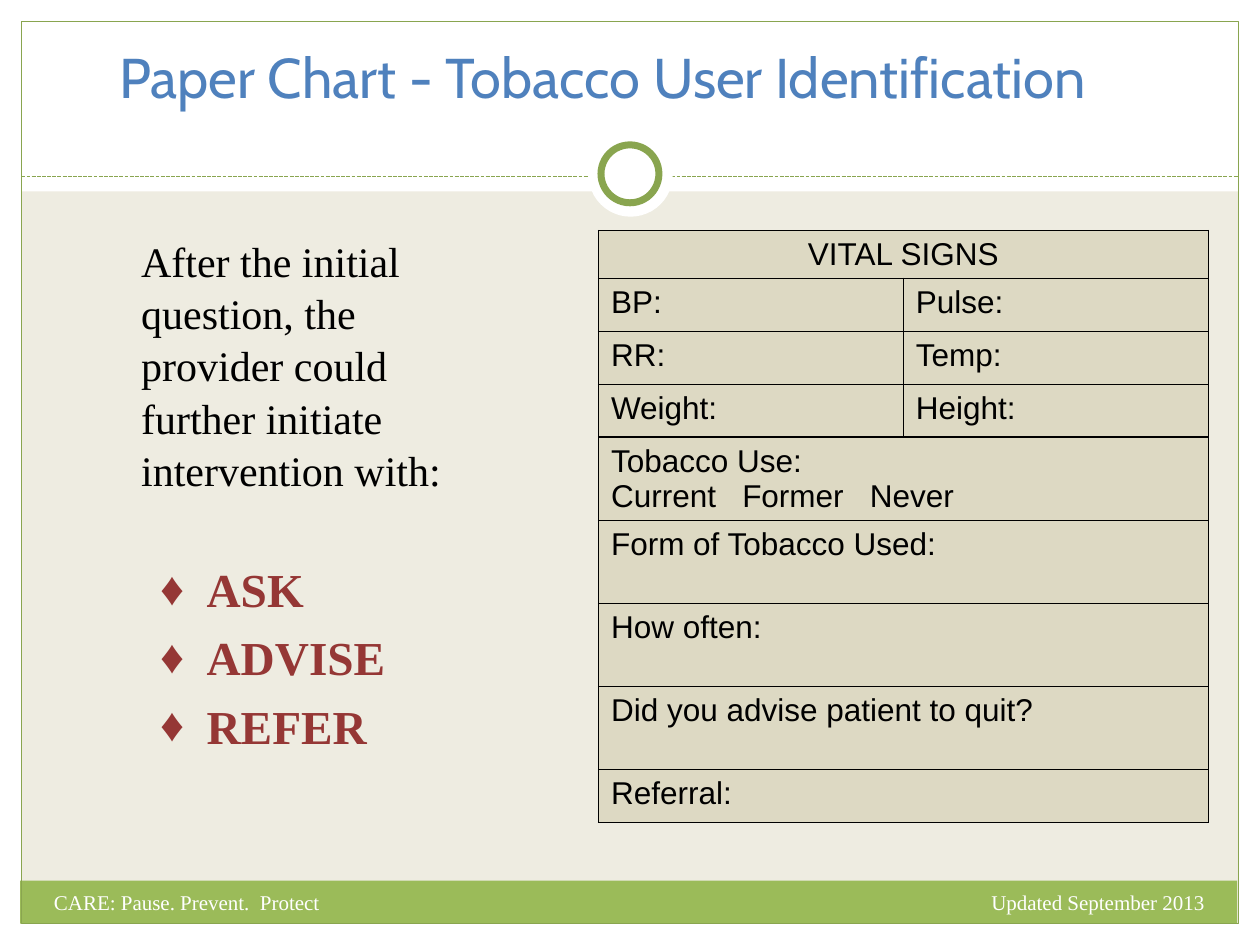
import pptx
import pptx.dml.color
import pptx.enum.dml
import pptx.enum.shapes
import pptx.enum.text
import pptx.oxml
import pptx.oxml.ns
import pptx.util
from pptx.util import Inches

SHAPE = pptx.enum.shapes.MSO_SHAPE
ALIGN = pptx.enum.text.PP_ALIGN
ANCHOR = pptx.enum.text.MSO_ANCHOR
SERIF = "Times New Roman"
WHITE, GREEN, OLIVE = "FFFFFF", "9BBB59", "89A54F"

# One label spans the row; two labels share it
VITAL_ROWS = [
    (["VITAL SIGNS"], 0.38),
    (["BP:", "Pulse:"], 0.42),
    (["RR:", "Temp:"], 0.42),
    (["Weight:", "Height:"], 0.42),
    (["Tobacco Use:\vCurrent   Former   Never"], 0.66),
    (["Form of Tobacco Used:"], 0.66),
    (["How often:"], 0.66),
    (["Did you advise patient to quit?"], 0.66),
    (["Referral:"], 0.42),
]


def color(value):
    return pptx.dml.color.RGBColor.from_string(value)


def xml(tag, attributes="", content=""):
    namespace = pptx.oxml.ns.nsdecls("a")
    return pptx.oxml.parse_xml(f"<a:{tag} {namespace} {attributes}>{content}</a:{tag}>")


def format_text(paragraph, size, font, fill, bold=False, align=ALIGN.LEFT):
    paragraph.alignment = align
    for run in paragraph.runs:
        run.font.size = pptx.util.Pt(size)
        run.font.name = font
        run.font.bold = bold
        run.font.color.rgb = color(fill)


def place(item, left, top, width, height):
    item.left, item.top = Inches(left), Inches(top)
    item.width, item.height = Inches(width), Inches(height)


def add_panel(slide, kind, box, fill=None, line=None, weight=0.75):
    panel = slide.shapes.add_shape(kind, *map(Inches, box))
    panel.shadow.inherit = False
    if fill:
        panel.fill.solid()
        panel.fill.fore_color.rgb = color(fill)
    else:
        panel.fill.background()
    if line:
        panel.line.color.rgb = color(line)
        panel.line.width = pptx.util.Pt(weight)
    else:
        panel.line.fill.background()


def add_frame(slide):
    # White margins and header, then the green footer
    for box in [(0, 7.33, 10, 0.17), (0, 0, 10, 1.52),
                (0, 0, 0.17, 7.5), (9.83, 0, 0.17, 7.5)]:
        add_panel(slide, SHAPE.RECTANGLE, box, WHITE)
    add_panel(slide, SHAPE.RECTANGLE, (0.16, 6.99, 9.66, 0.34), GREEN)
    add_panel(slide, SHAPE.RECTANGLE, (0.17, 0.17, 9.66, 7.16), line=OLIVE)

    # Dashed divider with the ring on it
    divider = slide.shapes.add_connector(
        pptx.enum.shapes.MSO_CONNECTOR.STRAIGHT,
        Inches(0.17), Inches(1.4), Inches(9.83), Inches(1.4))
    divider.line.color.rgb = color(OLIVE)
    divider.line.width = pptx.util.Pt(0.75)
    divider.line.dash_style = pptx.enum.dml.MSO_LINE.SQUARE_DOT
    divider.element.spPr.append(xml("effectLst"))
    add_panel(slide, SHAPE.OVAL, (4.67, 1.05, 0.67, 0.67), WHITE)
    add_panel(slide, SHAPE.OVAL, (4.77, 1.15, 0.46, 0.46), WHITE, OLIVE, 4)


def fill_title(slide):
    title = slide.shapes.title
    place(title, 0, 0, 9.67, 0.92)
    title.text_frame.text = "Paper Chart - Tobacco User Identification "
    title.text_frame.vertical_anchor = ANCHOR.BOTTOM
    title.text_frame.auto_size = pptx.enum.text.MSO_AUTO_SIZE.NONE
    format_text(title.text_frame.paragraphs[0], 32, "Cabin", "4F81BD", align=ALIGN.CENTER)
    slide.shapes.element.append(title.element)  # in front of the header


def indent(paragraph, margin, hanging, bullet):
    properties = paragraph._p.get_or_add_pPr()
    properties.set("marL", str(Inches(margin)))
    properties.set("indent", str(Inches(hanging)))
    properties.append(bullet)


def fill_body(slide):
    body = slide.placeholders[1]
    place(body, 0.42, 1.8, 3.67, 4.95)
    frame = body.text_frame
    frame.auto_size = pptx.enum.text.MSO_AUTO_SIZE.NONE
    frame.text = ("After the initial question, the provider could "
                  "further initiate intervention with:")
    intro = frame.paragraphs[0]
    intro.line_spacing = 1.04
    intro.space_before = pptx.util.Pt(4.8)
    format_text(intro, 24, SERIF, "000000")
    indent(intro, 0.6, 0, xml("buNone"))

    for action, gap in [("ASK", 36), ("ADVISE", 5.4), ("REFER", 5.4)]:
        step = frame.add_paragraph()
        step.text = action
        step.line_spacing = 1.04
        step.space_before = pptx.util.Pt(gap)
        format_text(step, 27, SERIF, "953735", bold=True)
        indent(step, 1.12, -0.37, xml("buChar", 'char="♦"'))
    slide.shapes.element.append(body.element)


def style_cell(cell):
    cell.fill.solid()
    cell.fill.fore_color.rgb = color("DDD9C3")
    properties = cell._tc.get_or_add_tcPr()
    stroke = '<a:solidFill><a:srgbClr val="000000"/></a:solidFill>'
    for position, side in enumerate(("lnL", "lnR", "lnT", "lnB")):
        properties.insert(position, xml(side, 'w="12700"', stroke))


def add_vital_signs(slide):
    height = sum(row_height for _, row_height in VITAL_ROWS)
    vitals = slide.shapes.add_table(
        len(VITAL_ROWS), 2, Inches(4.75), Inches(1.83), Inches(4.84), Inches(height)).table
    vitals.first_row = vitals.horz_banding = False
    for row, (labels, row_height) in enumerate(VITAL_ROWS):
        vitals.rows[row].height = Inches(row_height)
        for column in range(2):
            style_cell(vitals.cell(row, column))
        if len(labels) == 1:
            vitals.cell(row, 0).merge(vitals.cell(row, 1))
        for column, label in enumerate(labels):
            paragraph = vitals.cell(row, column).text_frame.paragraphs[0]
            paragraph.text = label
            format_text(paragraph, 18, "Arial", "000000",
                        align=ALIGN.CENTER if row == 0 else ALIGN.LEFT)


def add_footer(slide, text, left, width, align):
    footer = slide.shapes.add_textbox(Inches(left), Inches(7.01), Inches(width), Inches(0.4))
    footer.text_frame.word_wrap = True
    footer.text_frame.text = text
    format_text(footer.text_frame.paragraphs[0], 12, SERIF, WHITE, align=align)


def main():
    deck = pptx.Presentation()
    deck.slide_width, deck.slide_height = Inches(10), Inches(7.5)
    slide = deck.slides.add_slide(deck.slide_layouts[1])
    slide.background.fill.solid()
    slide.background.fill.fore_color.rgb = color("EEECE1")

    add_frame(slide)
    fill_title(slide)
    fill_body(slide)
    add_vital_signs(slide)
    add_footer(slide, "Updated September 2013", 6.33, 3.33, ALIGN.RIGHT)
    add_footer(slide, "CARE: Pause. Prevent.  Protect", 0.33, 5, ALIGN.LEFT)
    deck.save("out.pptx")


if __name__ == "__main__":
    main()
